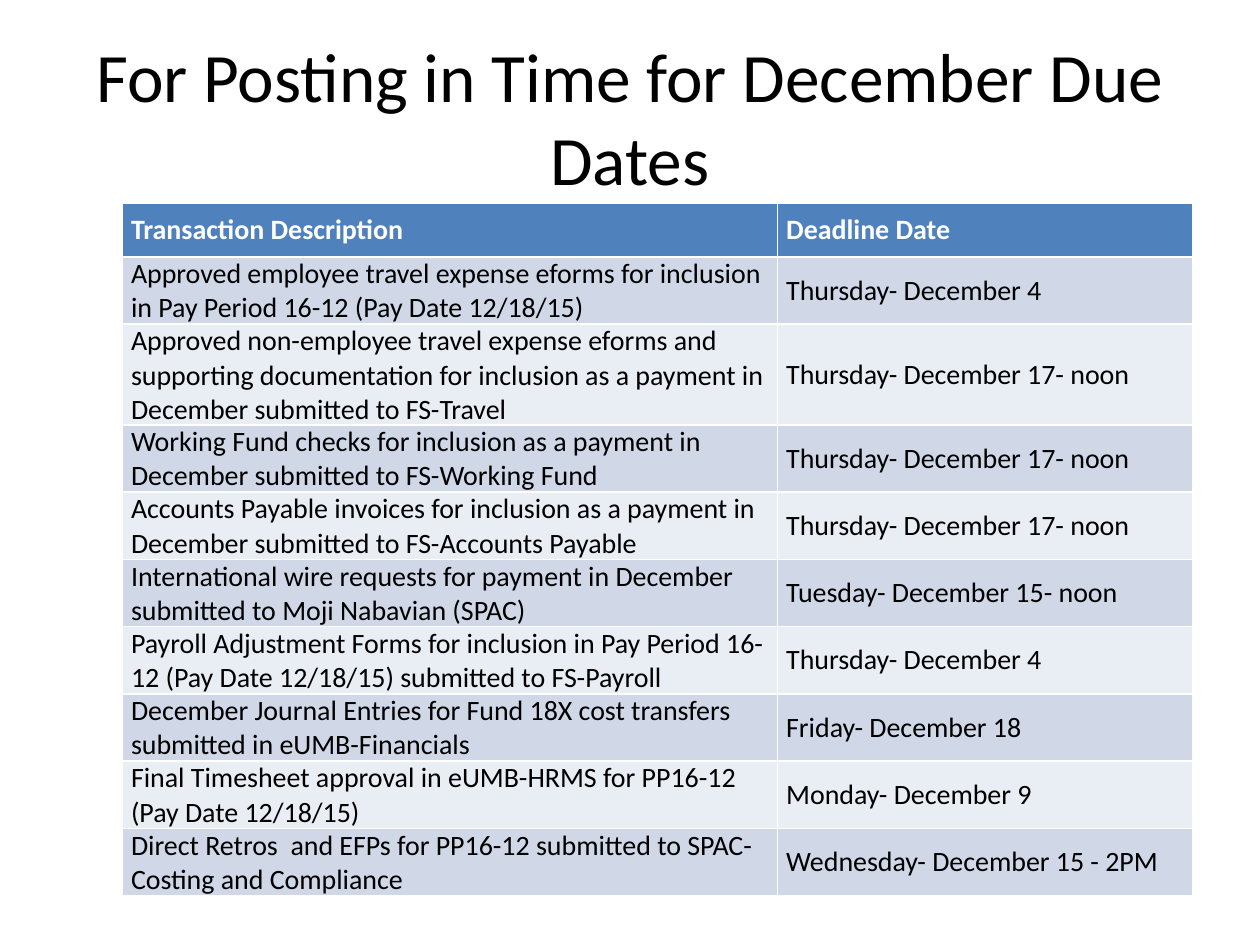
from pptx import Presentation
from pptx.dml.color import RGBColor
from pptx.enum.text import MSO_ANCHOR, PP_ALIGN
from pptx.util import Inches, Pt

MIDDLE, TOP = MSO_ANCHOR.MIDDLE, MSO_ANCHOR.TOP
CENTER, LEFT = PP_ALIGN.CENTER, PP_ALIGN.LEFT
BLACK = RGBColor(0x00, 0x00, 0x00)
WHITE = RGBColor(0xFF, 0xFF, 0xFF)
BLUE = RGBColor(0x4F, 0x81, 0xBD)
BANDS = RGBColor(0xD0, 0xD8, 0xE8), RGBColor(0xE9, 0xED, 0xF4)
WIDTH, HEIGHT = Inches(10), Inches(7.5)

HEAD = "Transaction Description", "Deadline Date"
ITEMS = [
    ("Approved employee travel expense eforms for inclusion in Pay Period 16-12 (Pay Date 12/18/15)",
     "Thursday- December 4"),
    ("Approved non-employee travel expense eforms and supporting documentation for inclusion "
     "as a payment in December submitted to FS-Travel",
     "Thursday- December 17- noon"),
    ("Working Fund checks for inclusion as a payment in December submitted to FS-Working Fund",
     "Thursday- December 17- noon"),
    ("Accounts Payable invoices for inclusion as a payment in December submitted to FS-Accounts Payable",
     "Thursday- December 17- noon"),
    ("International wire requests for payment in December submitted to Moji Nabavian (SPAC)",
     "Tuesday- December 15- noon"),
    ("Payroll Adjustment Forms for inclusion in Pay Period 16-12 (Pay Date 12/18/15) submitted to FS-Payroll",
     "Thursday- December 4"),
    ("December Journal Entries for Fund 18X cost transfers submitted in eUMB-Financials",
     "Friday- December 18"),
    ("Final Timesheet approval in eUMB-HRMS for PP16-12 (Pay Date 12/18/15)",
     "Monday- December 9"),
    ("Direct Retros  and EFPs for PP16-12 submitted to SPAC-Costing and Compliance",
     "Wednesday- December 15 - 2PM"),
]


class Page:
    """Holds the text style and the slide, and adds elements by shares of its size."""

    font = "Calibri"

    def __init__(self, slide):
        self.slide = slide

    def place(self, left, top, width, height):
        return (int(left * WIDTH), int(top * HEIGHT),
                int(width * WIDTH), int(height * HEIGHT))

    def label(self, frame, text, size, color, bold=False, align=LEFT):
        frame.text = text
        frame.word_wrap = True
        for para in frame.paragraphs:
            para.alignment = align
            for run in para.runs:
                run.font.name = self.font
                run.font.size = Pt(size)
                run.font.bold = bold
                run.font.color.rgb = color

    def title(self, text, box):
        frame = self.slide.shapes.add_textbox(*self.place(*box)).text_frame
        self.label(frame, text, 39.6, BLACK, align=CENTER)
        frame.vertical_anchor = MIDDLE

    def cell(self, cell, text, fill, color, bold, anchor):
        cell.fill.solid()
        cell.fill.fore_color.rgb = fill
        cell.margin_left = cell.margin_right = Inches(0.07)
        cell.margin_top = cell.margin_bottom = 0
        self.label(cell.text_frame, text, 16, color, bold)
        cell.vertical_anchor = anchor

    def table(self, head, items, box, cols, rows):
        grid = self.slide.shapes.add_table(
            len(rows), len(cols), *self.place(*box)).table
        for col, share in zip(grid.columns, cols):
            col.width = int(share * WIDTH)
        for row, share in zip(grid.rows, rows):
            row.height = int(share * HEIGHT)
        for x, text in enumerate(head):
            self.cell(grid.cell(0, x), text, BLUE, WHITE, True, MIDDLE)
        for y, item in enumerate(items, 1):
            for x, text in enumerate(item):
                anchor = TOP if x == 0 and y < 8 else MIDDLE
                self.cell(grid.cell(y, x), text, BANDS[(y - 1) % 2],
                          BLACK, False, anchor)


def main():
    deck = Presentation()
    deck.slide_width, deck.slide_height = WIDTH, HEIGHT
    page = Page(deck.slides.add_slide(deck.slide_layouts[6]))
    page.title("For Posting in Time for December Due Dates",
               (0.05, 0.04, 0.9, 1 / 6))
    line = 0.235 / 7.5
    rows = [0.43 / 7.5, 2 * line, 3 * line] + [2 * line] * 7
    cols = 0.52, 0.33
    page.table(HEAD, ITEMS, (0.097, 1.61 / 7.5, sum(cols), sum(rows)), cols, rows)
    deck.save("out.pptx")


if __name__ == "__main__":
    main()
